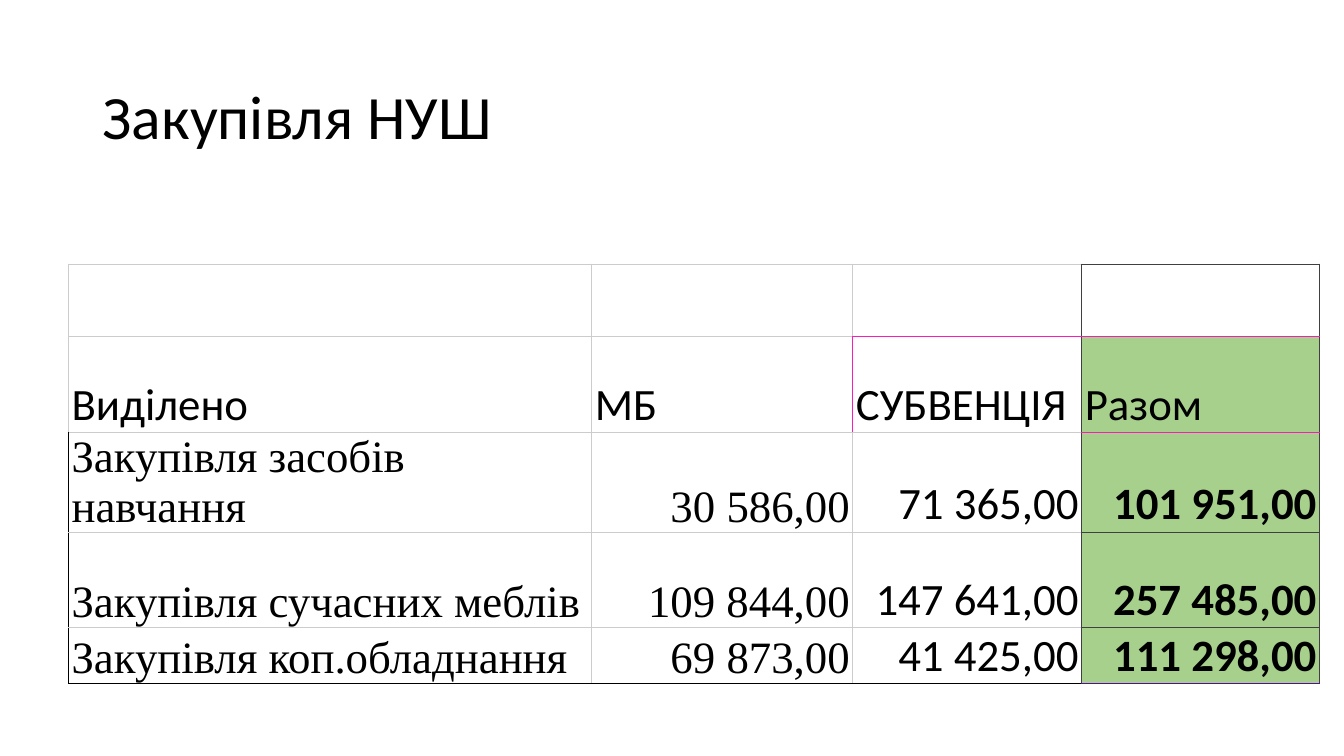
"""Build the slide with the school purchase table."""
from lxml.etree import SubElement
from pptx import Presentation
from pptx.dml.color import RGBColor
from pptx.enum.text import MSO_ANCHOR, PP_ALIGN
from pptx.oxml.ns import qn
from pptx.util import Inches, Pt

COLORS = {
    "black": "000000",
    "white": "FFFFFF",
    "green": "A8D08D",
    "grey": "CCCCCC",
    "dark": "404040",
    "pink": "F81DBB",
    "purple": "580C9B",
}
SANS, SERIF = "Calibri", "Times New Roman"
COL_WIDTHS = [5.19, 2.59, 2.27, 2.36]
ROW_HEIGHTS = [0.72, 0.95, 0.98, 0.95, 0.55]
ROWS = [
    ["", "", "", ""],
    ["Виділено", "МБ", "СУБВЕНЦІЯ", "Разом"],
    ["Закупівля засобів навчання", "30 586,00", "71 365,00", "101 951,00"],
    ["Закупівля сучасних меблів", "109 844,00", "147 641,00", "257 485,00"],
    ["Закупівля коп.обладнання", "69 873,00", "41 425,00", "111 298,00"],
]
HORIZONTAL = [
    ["grey"] * 3 + ["dark"],
    ["grey"] * 2 + ["pink"] * 2,
    ["grey"] * 3 + ["pink"],
    ["grey"] * 3 + ["dark"],
    ["grey"] * 3 + ["dark"],
    ["black"] * 3 + ["purple"],
]
VERTICAL = [
    ["grey"] * 3 + ["dark"] * 2,
    ["grey"] * 2 + ["pink"] + ["dark"] * 2,
] + [["black"] + ["grey"] * 2 + ["dark"] * 2] * 3


def rgb(name):
    return RGBColor.from_string(COLORS[name])


def style_text(p, size, font, bold=False):
    for r in p.runs:
        r.font.size = Pt(size)
        r.font.name = font
        r.font.bold = bold
        r.font.color.rgb = rgb("black")


def add_title(s, text):
    sp = s.shapes.title
    sp.left, sp.top = Inches(0.92), Inches(0.4)
    sp.width, sp.height = Inches(11.73), Inches(1.57)
    tf = sp.text_frame
    tf.text = text
    tf.vertical_anchor = MSO_ANCHOR.MIDDLE
    p = tf.paragraphs[0]
    p.alignment = PP_ALIGN.LEFT
    p.line_spacing = 0.9
    style_text(p, 44, SANS)


def set_borders(cell, row, col):
    sides = {
        "a:lnL": VERTICAL[row][col],
        "a:lnR": VERTICAL[row][col + 1],
        "a:lnT": HORIZONTAL[row][col],
        "a:lnB": HORIZONTAL[row + 1][col],
    }
    tc_pr = cell._tc.get_or_add_tcPr()
    for tag, color in sides.items():
        ln = SubElement(tc_pr, qn(tag), w=str(Pt(0.75)))
        fill = SubElement(ln, qn("a:solidFill"))
        SubElement(fill, qn("a:srgbClr"), val=COLORS[color])


def fill_cell(cell, row, col, text):
    set_borders(cell, row, col)
    cell.fill.solid()
    cell.fill.fore_color.rgb = rgb("green" if row and col == 3 else "white")
    cell.vertical_anchor = MSO_ANCHOR.BOTTOM
    cell.margin_left = cell.margin_right = Inches(0.03)
    cell.margin_top = cell.margin_bottom = 0
    cell.text_frame.text = text
    p = cell.text_frame.paragraphs[0]
    in_body = row > 1
    p.alignment = PP_ALIGN.RIGHT if in_body and col else PP_ALIGN.LEFT
    font = SERIF if in_body and col < 2 else SANS
    style_text(p, 32, font, in_body and col == 3)


def add_purchase_table(s):
    frame = s.shapes.add_table(
        len(ROWS), len(COL_WIDTHS), Inches(0.68), Inches(2.62),
        Inches(sum(COL_WIDTHS)), Inches(sum(ROW_HEIGHTS)))
    table = frame.table
    table.first_row = table.horz_banding = False
    for column, width in zip(table.columns, COL_WIDTHS):
        column.width = Inches(width)
    for i, (height, texts) in enumerate(zip(ROW_HEIGHTS, ROWS)):
        table.rows[i].height = Inches(height)
        for j, text in enumerate(texts):
            fill_cell(table.cell(i, j), i, j, text)


def main():
    prs = Presentation()
    prs.slide_width, prs.slide_height = Inches(13.33), Inches(7.5)
    s = prs.slides.add_slide(prs.slide_layouts[5])
    add_title(s, "Закупівля НУШ")
    add_purchase_table(s)
    prs.save("out.pptx")


if __name__ == "__main__":
    main()
